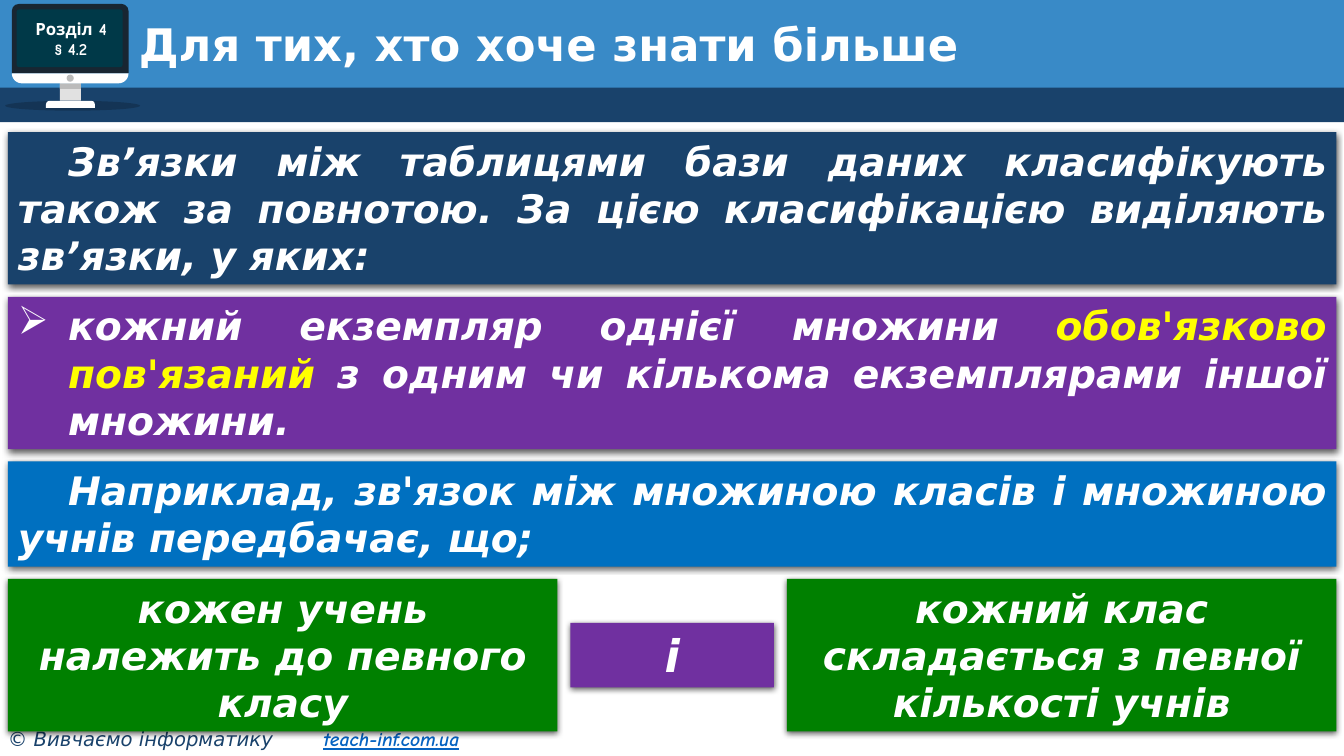
import math
from dataclasses import dataclass

from lxml import etree
from pptx import Presentation
from pptx import util as u
from pptx.dml.color import RGBColor
from pptx.enum import shapes, text
from pptx.oxml.ns import qn

COLORS = {
    "sky": "398AC7", "navy": "19426B", "purple": "7030A0", "blue": "0070C0",
    "green": "008000", "white": "FFFFFF", "yellow": "FFFF00", "black": "000000",
    "case": "182632", "screen": "003948", "neck": "E1E1E1", "grey": "BBBBBB",
    "link": "0563C1",
}
KIND = shapes.MSO_SHAPE
ALIGN = text.PP_ALIGN
ANCHOR = text.MSO_ANCHOR
SANS, COMIC = "DejaVu Sans", "Comic Neue"
LEFT, WIDTH, TOP, GAP = 0.2, 33.48, 3.33, 0.31
INDENT = 1.27


@dataclass
class Part:
    kind: KIND
    x: float
    y: float
    w: float
    h: float
    color: str
    adj: float | None = None
    alpha: int = 100


@dataclass
class Run:
    text: str
    size: int = 28
    color: str = "white"
    font: str = SANS
    bold: bool = True
    italic: bool = True
    underline: bool = False


@dataclass
class Panel:
    x: float
    y: float
    w: float
    h: float
    color: str
    paragraphs: list[list[Run]]
    align: ALIGN = ALIGN.CENTER
    margin: float = 0
    indent: float = 0
    bullet: str = ""


def rgb(name: str) -> RGBColor:
    return RGBColor.from_string(COLORS[name])


def paint(sp, color: str) -> None:
    sp.shadow.inherit = False
    sp.fill.solid()
    sp.fill.fore_color.rgb = rgb(color)
    sp.line.fill.background()


def add_part(s, part: Part):
    sp = s.shapes.add_shape(part.kind, u.Cm(part.x), u.Cm(part.y), u.Cm(part.w), u.Cm(part.h))
    paint(sp, part.color)
    if part.adj is not None:
        sp.adjustments[0] = part.adj
    if part.alpha < 100:
        clr = sp.fill._xPr.find(qn("a:solidFill"))[0]
        etree.SubElement(clr, qn("a:alpha"), val=str(part.alpha * 1000))
    return sp


def add_chin(s, x: float, y: float, w: float, h: float) -> None:
    angles = [math.radians(a) for a in range(0, 91, 10)]
    right = [(x + w - h + h * math.cos(a), y + h * math.sin(a)) for a in angles]
    left = [(2 * x + w - px, py) for px, py in reversed(right)]
    points = [(u.Cm(px), u.Cm(py)) for px, py in right + left]
    builder = s.shapes.build_freeform(*points[0])
    builder.add_line_segments(points[1:], close=True)
    paint(builder.convert_to_shape(), "white")


def add_shadow(sp) -> None:
    effects = sp._element.spPr.find(qn("a:effectLst"))
    shadow = etree.SubElement(effects, qn("a:outerShdw"), blurRad="57150", dist="19050",
                              dir="5400000", algn="ctr", rotWithShape="0")
    clr = etree.SubElement(shadow, qn("a:srgbClr"), val=COLORS["black"])
    etree.SubElement(clr, qn("a:alpha"), val="63000")


def write(tf, paragraphs: list[list[Run]], align: ALIGN, anchor: ANCHOR) -> None:
    tf.word_wrap = True
    tf.vertical_anchor = anchor
    for i, runs in enumerate(paragraphs):
        p = tf.add_paragraph() if i else tf.paragraphs[0]
        p.alignment = align
        for run in runs:
            r = p.add_run()
            r.text = run.text
            r.font.size = u.Pt(run.size)
            r.font.name = run.font
            r.font.color.rgb = rgb(run.color)
            r.font.bold = run.bold
            r.font.italic = run.italic
            r.font.underline = run.underline


def add_panel(s, panel: Panel) -> None:
    sp = add_part(s, Part(KIND.RECTANGLE, panel.x, panel.y, panel.w, panel.h, panel.color))
    add_shadow(sp)
    tf = sp.text_frame
    write(tf, panel.paragraphs, panel.align, ANCHOR.TOP)
    tf.auto_size = text.MSO_AUTO_SIZE.SHAPE_TO_FIT_TEXT
    for p in tf.paragraphs:
        pPr = p._p.get_or_add_pPr()
        pPr.set("marL", str(u.Cm(panel.margin)))
        pPr.set("indent", str(u.Cm(panel.indent)))
        if panel.bullet:
            etree.SubElement(pPr, qn("a:buChar"), char=panel.bullet)


def add_label(s, x: float, y: float, w: float, h: float, paragraphs: list[list[Run]],
              align: ALIGN = ALIGN.LEFT, anchor: ANCHOR = ANCHOR.MIDDLE):
    tf = s.shapes.add_textbox(u.Cm(x), u.Cm(y), u.Cm(w), u.Cm(h)).text_frame
    write(tf, paragraphs, align, anchor)
    return tf.paragraphs[0]


BACKDROP = [
    Part(KIND.RECTANGLE, 0, 0, 33.87, 2.31, "sky"),
    Part(KIND.RECTANGLE, 0, 2.21, 33.87, 0.87, "navy"),
    Part(KIND.OVAL, 0.13, 2.54, 3.4, 0.25, "black", alpha=20),
    Part(KIND.ROUND_2_SAME_RECTANGLE, 0.3, 0.1, 2.94, 1.75, "case", 0.1),
    Part(KIND.RECTANGLE, 1.51, 2.1, 0.53, 0.44, "neck"),
    Part(KIND.RECTANGLE, 1.51, 2.1, 0.53, 0.14, "grey"),
    Part(KIND.ROUND_2_SAME_RECTANGLE, 1.16, 2.54, 1.23, 0.18, "white", 0.5),
]
SCREEN = [
    Part(KIND.OVAL, 1.68, 1.88, 0.18, 0.18, "grey"),
    Part(KIND.ROUNDED_RECTANGLE, 0.42, 0.24, 2.67, 1.45, "screen", 0.04),
]


def panels() -> list[Panel]:
    tall, short, side, middle, low = 3.84, 2.65, 13.85, 5.13, 1.63
    second = TOP + tall + GAP
    third = second + tall + GAP
    bottom = third + short + GAP
    intro = [Run("Зв’язки між таблицями бази даних класифікують також за повнотою. "
                 "За цією класифікацією виділяють зв’язки, у яких:")]
    rule = [Run("кожний екземпляр однієї множини "),
            Run("обов'язково пов'язаний", color="yellow"),
            Run(" з одним чи кількома екземплярами іншої множини.")]
    example = [Run("Наприклад, зв'язок між множиною класів і множиною учнів передбачає, що;")]
    pupil = [[Run("кожен учень")], [Run("належить до певного класу")]]
    group = [[Run("кожний клас складається з певної кількості учнів")]]
    return [
        Panel(LEFT, TOP, WIDTH, tall, "navy", [intro], ALIGN.JUSTIFY, 0, INDENT),
        Panel(LEFT, second, WIDTH, tall, "purple", [rule], ALIGN.JUSTIFY, INDENT, -INDENT, "➢"),
        Panel(LEFT, third, WIDTH, short, "blue", [example], ALIGN.JUSTIFY, 0, INDENT),
        Panel(LEFT, bottom, side, tall, "green", pupil),
        Panel(LEFT + WIDTH - side, bottom, side, tall, "green", group),
        Panel(LEFT + (WIDTH - middle) / 2, bottom + (tall - low) / 2, middle, low,
              "purple", [[Run("і", 32)]]),
    ]


def main() -> None:
    """Build the slide on relationships between database tables."""
    prs = Presentation()
    prs.slide_width, prs.slide_height = u.Cm(33.87), u.Cm(19.05)
    s = prs.slides.add_slide(prs.slide_layouts[6])
    for part in BACKDROP:
        add_part(s, part)
    add_chin(s, 0.3, 1.85, 2.94, 0.25)
    for part in SCREEN:
        add_part(s, part)
    footer = add_label(s, -0.05, 18.19, 13.28, 0.86, [[
        Run("© Вивчаємо інформатику\t", 14, "navy", bold=False),
        Run("teach-inf.com.ua", 14, "link", COMIC, underline=True)]], anchor=ANCHOR.TOP)
    tabs = etree.SubElement(footer._p.get_or_add_pPr(), qn("a:tabLst"))
    etree.SubElement(tabs, qn("a:tab"), pos=str(u.Cm(7.95)), algn="l")
    add_label(s, 0.33, 0.23, 2.92, 1.5,
              [[Run(line, 12, font=COMIC, italic=False)] for line in ("Розділ 4", "§ 4.2")],
              ALIGN.CENTER)
    title = add_label(s, 3.25, 0.46, 29.77, 1.47,
                      [[Run("Для тих, хто хоче знати більше", 32, italic=False)]])
    title.line_spacing = 0.9
    for panel in panels():
        add_panel(s, panel)
    prs.save("out.pptx")


if __name__ == "__main__":
    main()
